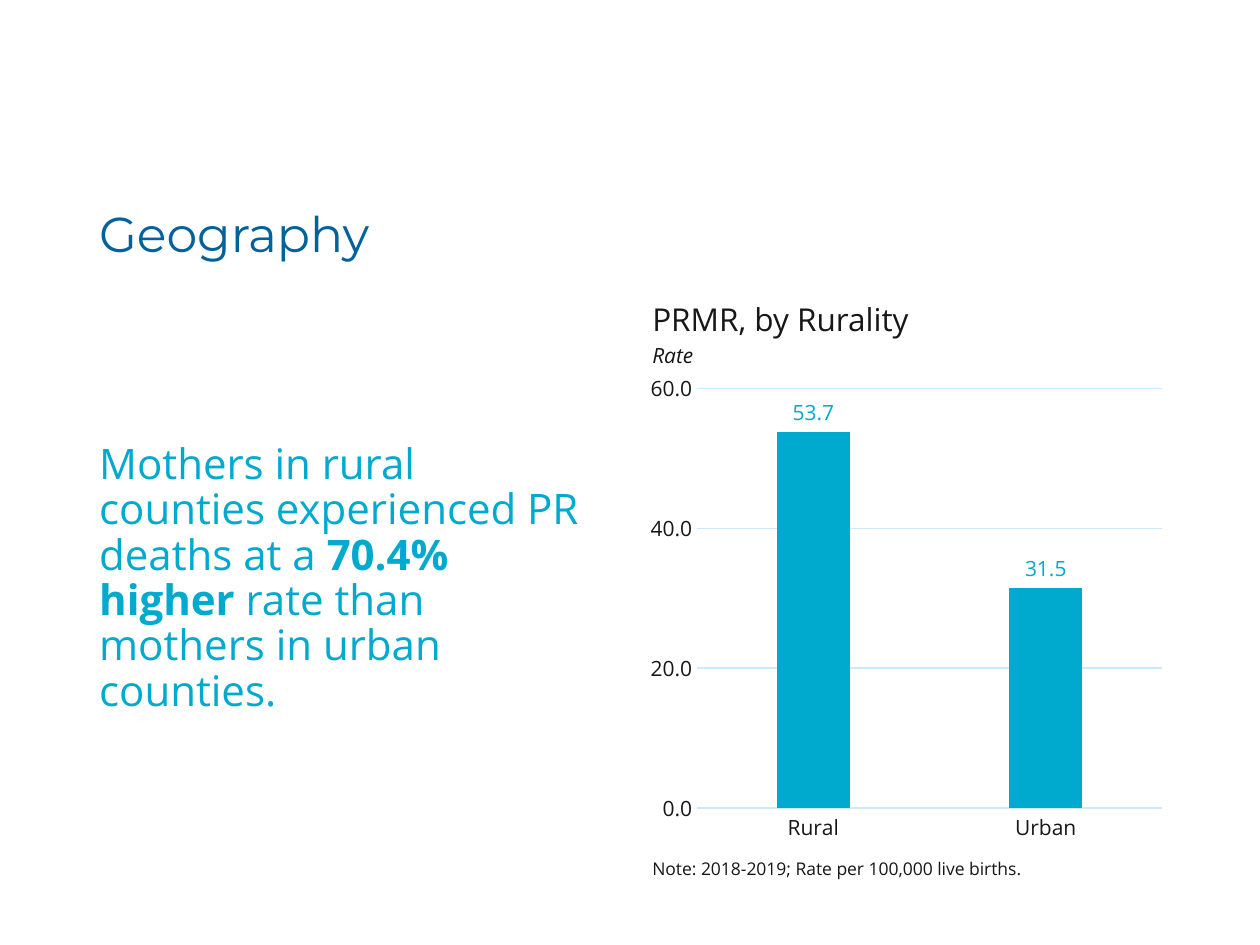
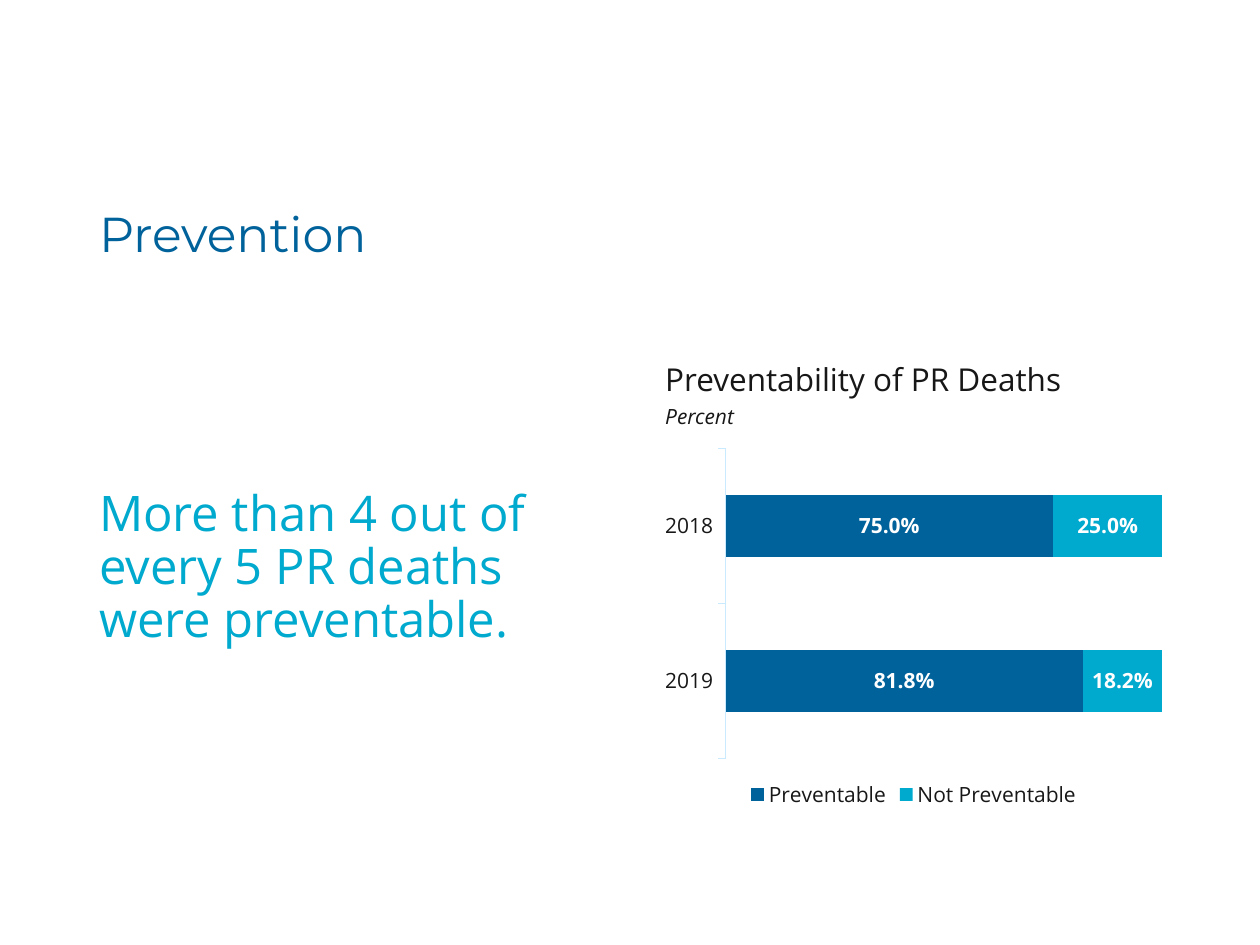
from pptx import Presentation
from pptx.chart.data import CategoryChartData
from pptx.dml.color import RGBColor
from pptx.enum.chart import XL_CHART_TYPE, XL_LABEL_POSITION, XL_LEGEND_POSITION, XL_TICK_MARK
from pptx.enum.text import MSO_ANCHOR
from pptx.util import Cm, Pt

COLUMN, STACKED_BAR = XL_CHART_TYPE.COLUMN_CLUSTERED, XL_CHART_TYPE.BAR_STACKED
OUTSIDE, CENTER = XL_LABEL_POSITION.OUTSIDE_END, XL_LABEL_POSITION.CENTER
TICK_NONE, TICK_OUT = XL_TICK_MARK.NONE, XL_TICK_MARK.OUTSIDE
LEGEND_BOTTOM = XL_LEGEND_POSITION.BOTTOM
TOP, MIDDLE = MSO_ANCHOR.TOP, MSO_ANCHOR.MIDDLE

NAVY = RGBColor(0x00, 0x62, 0x9B)
CYAN = RGBColor(0x00, 0xA9, 0xCE)
INK = RGBColor(0x18, 0x17, 0x17)
PALE = RGBColor(0xCA, 0xEB, 0xFF)
WHITE = RGBColor(0xFF, 0xFF, 0xFF)

TITLE_FONT, TEXT_FONT = "Montserrat", "Open Sans"
MARGIN = 1.75
TITLE_BOX = (MARGIN, 3.63, 21.89, 2.29)
TITLE = {"name": TITLE_FONT, "size": Pt(28), "color": NAVY}
BODY = {"name": TEXT_FONT, "color": CYAN}
HEADING = {"name": TEXT_FONT, "size": Pt(18), "color": INK}
UNIT = {"name": TEXT_FONT, "size": Pt(12), "color": INK, "italic": True}
NOTE = {"name": TEXT_FONT, "size": Pt(10), "color": INK}
AXIS = {"name": TEXT_FONT, "size": Pt(12), "color": INK}
RATE_LABEL = {**AXIS, "color": CYAN}
SHARE_LABEL = {**AXIS, "color": WHITE, "bold": True}


def style(font, fmt):
    """Apply a dict of format values to a font."""
    for key, value in fmt.items():
        if key == "color":
            font.color.rgb = value
        else:
            setattr(font, key, value)


def add_text(s, box, runs, fmt, spacing=None, anchor=TOP):
    """Add a one-paragraph text box from (text, extra format) runs."""
    tf = s.shapes.add_textbox(*map(Cm, box)).text_frame
    tf.word_wrap = True
    tf.vertical_anchor = anchor
    p = tf.paragraphs[0]
    if spacing:
        p.line_spacing = spacing
    for text, extra in runs:
        r = p.add_run()
        r.text = text
        style(r.font, {**fmt, **extra})


def add_message(prs, title, box, runs, size):
    """Add a slide with its title and the main message on the left."""
    s = prs.slides.add_slide(prs.slide_layouts[6])
    add_text(s, TITLE_BOX, [(title, {})], TITLE, 0.9, MIDDLE)
    add_text(s, box, runs, {**BODY, "size": Pt(size)}, 0.9)
    return s


def add_chart_heading(s, left, top, width, heading, unit):
    """Add the chart heading and the unit below it."""
    add_text(s, (left, top, width, 1.02), [(heading, {})], HEADING)
    add_text(s, (left, top + 0.87, 6, 0.76), [(unit, {})], UNIT)


def add_bars(s, box, kind, categories, series, gap, tick, label_format, label_style, position):
    """Add a bar chart from (name, values, colour) series."""
    data = CategoryChartData()
    data.categories = categories
    for name, values, _ in series:
        data.add_series(name, values)
    chart = s.shapes.add_chart(kind, *map(Cm, box), data).chart
    chart.has_title = chart.has_legend = False
    style(chart.font, {"name": TEXT_FONT, "size": Pt(10), "color": NAVY})
    plot = chart.plots[0]
    plot.gap_width = gap
    plot.vary_by_categories = False
    for ser, (_, _, color) in zip(plot.series, series):
        ser.format.fill.solid()
        ser.format.fill.fore_color.rgb = color
        ser.invert_if_negative = False
        labels = ser.data_labels
        labels.show_value = True
        labels.number_format = label_format
        labels.number_format_is_linked = False
        labels.position = position
        style(labels.font, label_style)
    axis = chart.category_axis
    axis.major_tick_mark = tick
    axis.format.line.color.rgb = PALE
    axis.format.line.width = Pt(0.75)
    style(axis.tick_labels.font, AXIS)
    chart.value_axis.minimum_scale = 0
    return chart


def add_geography(prs):
    """Build the slide on rates by rurality."""
    s = add_message(prs, "Geography", (MARGIN, 8.81, 10.19, 6.3), [
        ("Mothers in rural counties experienced PR deaths at a ", {}),
        ("70.4% higher ", {"bold": True}),
        ("rate than mothers in urban counties.", {})], 24)
    left, top, width, height = 12.9, 7.34, 10.74, 9.83
    chart = add_bars(s, (left, top, width, height), COLUMN, ["Rural", "Urban"],
                     [("Series 1", (53.7, 31.5), CYAN)],
                     219, TICK_NONE, "#,##0.0", RATE_LABEL, OUTSIDE)
    axis = chart.value_axis
    axis.maximum_scale, axis.major_unit = 60, 20
    axis.major_tick_mark = TICK_NONE
    axis.format.line.fill.background()
    grid = axis.major_gridlines.format.line
    grid.color.rgb = PALE
    grid.width = Pt(0.75)
    axis.tick_labels.number_format = "#,##0.0"
    axis.tick_labels.number_format_is_linked = False
    style(axis.tick_labels.font, AXIS)
    add_chart_heading(s, left, top - 1.42, width, "PRMR, by Rurality", "Rate")
    add_text(s, (left, top + height, width, 0.69),
             [("Note: 2018-2019; Rate per 100,000 live births.", {})], NOTE)


def add_prevention(prs):
    """Build the slide on preventable deaths."""
    s = add_message(prs, "Prevention", (MARGIN, 9.73, 10.74, 3.71),
                    [("More than 4 out of every 5 PR deaths were preventable.", {})], 28)
    left, top, width, height = 13.2, 8.89, 10.44, 7.52
    chart = add_bars(s, (left, top, width, height), STACKED_BAR, ["2019", "2018"],
                     [("Preventable", (0.818, 0.75), NAVY),
                      ("Not Preventable", (0.182, 0.25), CYAN)],
                     150, TICK_OUT, "0.0%", SHARE_LABEL, CENTER)
    chart.plots[0].overlap = 100
    axis = chart.value_axis
    axis.maximum_scale = 1
    axis.has_major_gridlines = False
    axis.visible = False
    chart.has_legend = True
    chart.legend.position = LEGEND_BOTTOM
    chart.legend.include_in_layout = False
    style(chart.legend.font, AXIS)
    add_chart_heading(s, left - 0.04, top - 1.75, 11.94, "Preventability of PR Deaths", "Percent")


def main():
    """Build and save the presentation."""
    prs = Presentation()
    prs.slide_width, prs.slide_height = Cm(25.4), Cm(19.05)
    add_geography(prs)
    add_prevention(prs)
    prs.save("out.pptx")


if __name__ == "__main__":
    main()
